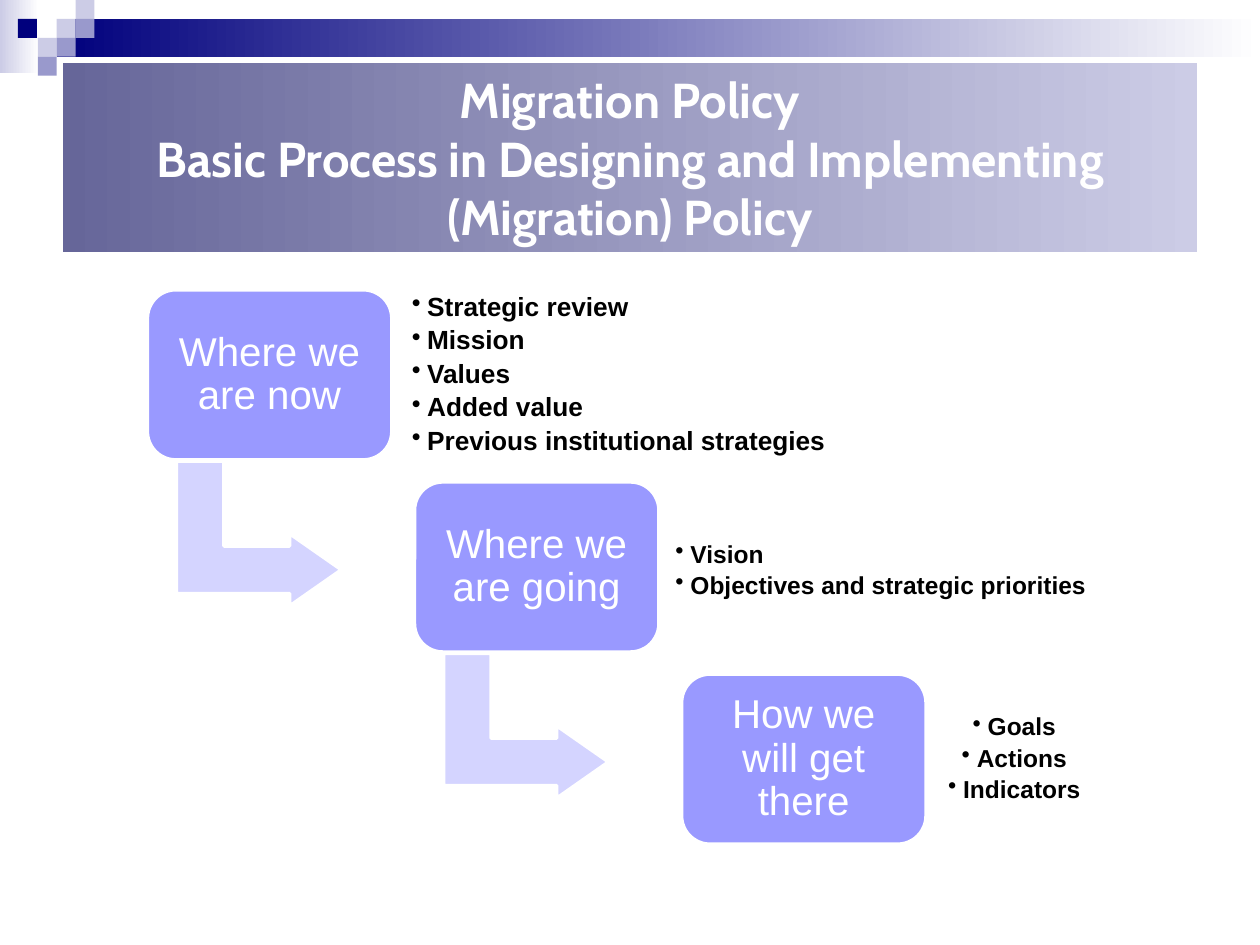
from dataclasses import dataclass

from lxml.etree import SubElement
from pptx import Presentation
from pptx.dml.color import RGBColor
from pptx.enum.shapes import MSO_SHAPE
from pptx.enum.text import MSO_ANCHOR, PP_ALIGN
from pptx.oxml.ns import qn
from pptx.util import Inches, Pt

SLIDE_WIDTH, SLIDE_HEIGHT = 10, 7.5
TILE = 0.15
STEP_LEFT, STEP_TOP = 1.17, 2.3
STEP_WIDTH, STEP_HEIGHT = 1.94, 1.35
COLUMN_PITCH, ROW_PITCH = 2.12, 1.525
ARROW_WIDTH, ARROW_HEIGHT = 1.15, 1.31
ARROW_DX, ARROW_DY = 0.31, 1.28

WHITE, BLACK, NAVY = "FFFFFF", "000000", "00007D"
PALE, LAVENDER, SLATE = "CCCCE6", "9999CC", "666699"
STEP_FILL, ARROW_FILL = "9999FF", "D4D4FF"


@dataclass(frozen=True)
class Box:
    left: float
    top: float
    width: float
    height: float


@dataclass(frozen=True)
class Tile:
    column: float
    row: float
    color: str


@dataclass(frozen=True)
class Step:
    label: str
    details: tuple[str, ...]
    details_dx: float
    details_width: float
    details_height: float
    details_drop: float = 0
    size: int = 14
    inset: float = 0.06
    align: PP_ALIGN = PP_ALIGN.LEFT


TILES = (
    Tile(3, 1, PALE), Tile(4, 0, PALE), Tile(4, 1, LAVENDER),
    Tile(2, 2, PALE), Tile(0.95, 1, NAVY), Tile(3, 2, LAVENDER),
    Tile(2, 3, LAVENDER),
)

STEPS = (
    Step("Where we are now",
         ("Strategic review", "Mission", "Values", "Added value",
          "Previous institutional strategies"),
         2.02, 3.56, 1.58, size=15, inset=0.08),
    Step("Where we are going",
         ("Vision", "Objectives and strategic priorities"),
         2.01, 3.54, 1.1, details_drop=0.03),
    Step("How we will get there", ("Goals", "Actions", "Indicators"),
         1.7, 1.88, 1.01, align=PP_ALIGN.CENTER),
)


def rgb(color: str) -> RGBColor:
    return RGBColor.from_string(color)


def frame(box: Box) -> tuple:
    return tuple(Inches(n) for n in (box.left, box.top, box.width, box.height))


def draw_shape(slide, kind, box: Box, *colors: str, outline=None, adjust=(), rotation=0):
    shape = slide.shapes.add_shape(kind, *frame(box))
    shape.shadow.inherit = False
    shape.rotation = rotation
    for index, value in enumerate(adjust):
        shape.adjustments[index] = value
    if len(colors) == 1:
        shape.fill.solid()
        shape.fill.fore_color.rgb = rgb(colors[0])
    else:
        shape.fill.gradient()
        shape.fill.gradient_angle = 0
        for position, (stop, color) in enumerate(zip(shape.fill.gradient_stops, colors)):
            stop.position = position
            stop.color.rgb = rgb(color)
    if outline:
        shape.line.color.rgb = rgb(outline)
        shape.line.width = Pt(2)
    else:
        shape.line.fill.background()
    return shape


def add_bullet(paragraph, indent: float) -> None:
    paragraph.level = 1
    properties = paragraph._p.get_or_add_pPr()
    properties.set("marL", str(Inches(indent)))
    properties.set("indent", str(-Inches(indent)))
    SubElement(properties, qn("a:buChar")).set("char", "•")


def write(shape, *lines: str, font="Arial", size=14, color=BLACK, bold=False,
          align=PP_ALIGN.CENTER, inset=None, line_spacing=None, gap=0, bullets=False) -> None:
    text = shape.text_frame
    text.word_wrap = True
    text.vertical_anchor = MSO_ANCHOR.MIDDLE
    if inset is not None:
        text.margin_left = text.margin_right = Inches(inset)
        text.margin_top = text.margin_bottom = Inches(inset)
    for index, line in enumerate(lines):
        paragraph = text.add_paragraph() if index else text.paragraphs[0]
        paragraph.text = line
        paragraph.alignment = align
        paragraph.space_after = Pt(gap)
        if line_spacing:
            paragraph.line_spacing = line_spacing
        if bullets:
            add_bullet(paragraph, 0.12)
        for run in paragraph.runs:
            run.font.name = font
            run.font.size = Pt(size)
            run.font.bold = bold
            run.font.color.rgb = rgb(color)


def draw_header(slide) -> None:
    draw_shape(slide, MSO_SHAPE.RECTANGLE, Box(0, 0, 0.31, 0.58), PALE, WHITE)
    band_left = 3 * TILE
    draw_shape(slide, MSO_SHAPE.RECTANGLE,
               Box(band_left, TILE, SLIDE_WIDTH - band_left, 2 * TILE), NAVY, WHITE)
    for tile in TILES:
        draw_shape(slide, MSO_SHAPE.RECTANGLE,
                   Box(tile.column * TILE, tile.row * TILE, TILE, TILE), tile.color)
    title = draw_shape(
        slide, MSO_SHAPE.RECTANGLE,
        Box(SLIDE_WIDTH * 0.05, 0.5, SLIDE_WIDTH * 0.9, SLIDE_HEIGHT * 0.2), SLATE, PALE)
    write(title, "Migration Policy\vBasic Process in Designing and Implementing (Migration) Policy",
          font="Cabin", size=28, color=WHITE, bold=True)


def draw_step(slide, step: Step, index: int) -> None:
    left = STEP_LEFT + index * COLUMN_PITCH
    top = STEP_TOP + index * ROW_PITCH
    if index < len(STEPS) - 1:
        draw_shape(slide, MSO_SHAPE.BENT_UP_ARROW,
                   Box(left + ARROW_DX, top + ARROW_DY, ARROW_WIDTH, ARROW_HEIGHT),
                   ARROW_FILL, outline=WHITE, adjust=(0.328, 0.25, 0.358), rotation=90)
    label = draw_shape(slide, MSO_SHAPE.ROUNDED_RECTANGLE,
                       Box(left, top, STEP_WIDTH, STEP_HEIGHT),
                       STEP_FILL, outline=WHITE, adjust=(0.167,))
    write(label, step.label, size=23, color=WHITE, inset=0.1, line_spacing=0.9)
    details_top = top + (STEP_HEIGHT - step.details_height) / 2 + step.details_drop
    details = slide.shapes.add_textbox(*frame(
        Box(left + step.details_dx, details_top, step.details_width, step.details_height)))
    write(details, *step.details, size=step.size, bold=True, align=step.align,
          inset=step.inset, line_spacing=0.9, gap=round(step.size * 0.19, 1), bullets=True)


def main() -> None:
    presentation = Presentation()
    presentation.slide_width = Inches(SLIDE_WIDTH)
    presentation.slide_height = Inches(SLIDE_HEIGHT)
    slide = presentation.slides.add_slide(presentation.slide_layouts[6])
    draw_header(slide)
    for index, step in enumerate(STEPS):
        draw_step(slide, step, index)
    presentation.save("out.pptx")


if __name__ == "__main__":
    main()
